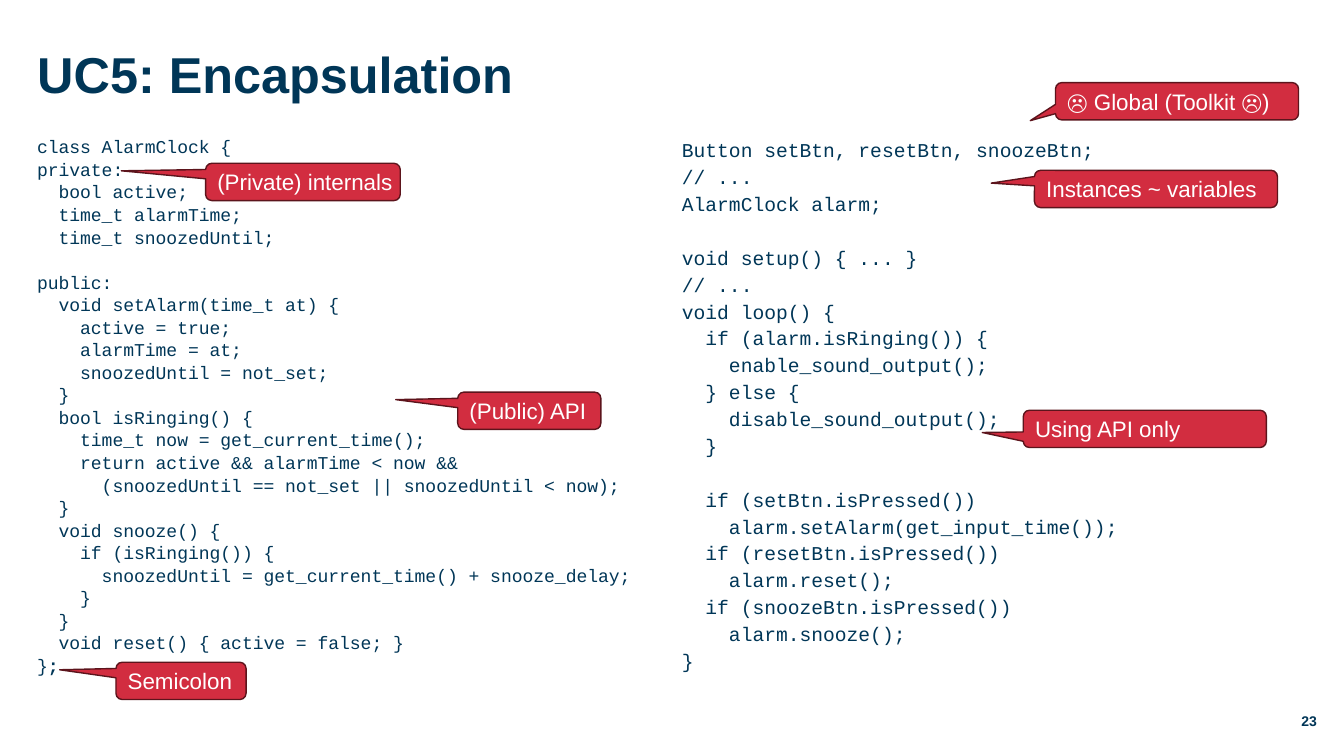
from dataclasses import dataclass

from pptx import Presentation
from pptx.dml.color import RGBColor
from pptx.enum.shapes import MSO_SHAPE as Preset
from pptx.enum.text import MSO_ANCHOR as Anchor, MSO_AUTO_SIZE as AutoSize, PP_ALIGN as Align
from pptx.slide import Slide
from pptx.text.text import Font
from pptx.util import Inches, Pt

SLIDE_W, SLIDE_H = Inches(13.33), Inches(7.5)
NAVY, RED, MAROON, WHITE = "003657", "D22D40", "5C141C", "FFFFFF"
CALLOUT_ROWS = 4.93

CLASS_CODE = """\
class AlarmClock {
private:
  bool active;
  time_t alarmTime;
  time_t snoozedUntil;

public:
  void setAlarm(time_t at) {
    active = true;
    alarmTime = at;
    snoozedUntil = not_set;
  }
  bool isRinging() {
    time_t now = get_current_time();
    return active && alarmTime < now &&
      (snoozedUntil == not_set || snoozedUntil < now);
  }
  void snooze() {
    if (isRinging()) {
      snoozedUntil = get_current_time() + snooze_delay;
    }
  }
  void reset() { active = false; }
};"""

SKETCH_CODE = """\
Button setBtn, resetBtn, snoozeBtn;
// ...
AlarmClock alarm;

void setup() { ... }
// ...
void loop() {
  if (alarm.isRinging()) {
    enable_sound_output();
  } else {
    disable_sound_output();
  }

  if (setBtn.isPressed())
    alarm.setAlarm(get_input_time());
  if (resetBtn.isPressed())
    alarm.reset();
  if (snoozeBtn.isPressed())
    alarm.snooze();
}"""


@dataclass(frozen=True)
class Listing:
    col: float
    code: str
    size: float
    pitch: float
    bold_end: str = ""


@dataclass(frozen=True)
class Callout:
    label: str
    col: float
    row: float
    cols: float
    tip_x: float
    tip_y: float


LISTINGS = [
    Listing(2.02, CLASS_CODE, 12.9, 16.1, bold_end=";"),
    Listing(50, SKETCH_CODE, 14, 19.2),
]

CALLOUTS = [
    Callout("Semicolon", 8.63, 87.6, 9.68, -0.933, -0.298),
    Callout("(Private) internals", 15.3, 21.6, 14.48, -0.933, -0.298),
    Callout("(Public) API", 34.06, 51.87, 10.65, -0.933, -0.298),
    Callout("Instances ~ variables", 76.97, 22.53, 18.08, -0.678, -0.157),
    Callout("Using API only", 76.14, 54.27, 18.08, -0.669, 0.097),
    Callout("☹ Global (Toolkit ☹)", 78.54, 10.93, 18.08, -0.604, 0.521),
]


def color(code: str) -> RGBColor:
    return RGBColor.from_string(code)


def cell(col: float, row: float, cols: float, rows: float) -> tuple[int, int, int, int]:
    """Turn a place on the 100 by 100 slide grid into left, top, width, height."""
    return (round(SLIDE_W * col / 100), round(SLIDE_H * row / 100),
            round(SLIDE_W * cols / 100), round(SLIDE_H * rows / 100))


def style(font: Font, name: str, size: float, ink: str, bold: bool = False) -> None:
    font.name, font.size, font.bold = name, Pt(size), bold
    font.color.rgb = color(ink)


def add_title(slide: Slide, text: str) -> None:
    title = slide.shapes.title
    title.left, title.top, title.width, title.height = cell(2.02, 0, 96, 14.4)
    frame = title.text_frame
    frame.text = text
    frame.auto_size, frame.vertical_anchor = AutoSize.NONE, Anchor.BOTTOM
    heading = frame.paragraphs[0]
    heading.alignment = Align.LEFT
    style(heading.font, "Arial", 36, NAVY, bold=True)


def add_page_number(slide: Slide, number: str) -> None:
    frame = slide.shapes.add_textbox(*cell(96.55, 94.13, 1.43, 2.53)).text_frame
    frame.margin_left = frame.margin_right = frame.margin_top = frame.margin_bottom = 0
    frame.word_wrap, frame.vertical_anchor = True, Anchor.MIDDLE
    frame.text = number
    frame.paragraphs[0].alignment = Align.RIGHT
    style(frame.paragraphs[0].font, "Arial", 10, NAVY, bold=True)


def add_listing(slide: Slide, listing: Listing) -> None:
    """Set one paragraph per code line; an empty line becomes space before the next."""
    frame = slide.shapes.add_textbox(*cell(listing.col, 17.2, 48, 73.87)).text_frame
    frame.word_wrap = True
    frame.text = listing.code.replace("\n\n", "\n")
    blocks = [block.split("\n") for block in listing.code.split("\n\n")]
    starts_block = [index == 0 for block in blocks for index in range(len(block))]
    for number, (line, starts) in enumerate(zip(frame.paragraphs, starts_block)):
        line.line_spacing = Pt(listing.pitch)
        line.space_before = Pt(listing.pitch if starts and number else 0)
        style(line.font, "Courier New", listing.size, NAVY)
    if listing.bold_end:
        last = frame.paragraphs[-1]
        last.runs[0].text = last.text.removesuffix(listing.bold_end)
        ending = last.add_run()
        ending.text = listing.bold_end
        ending.font.bold = True


def add_callout(slide: Slide, callout: Callout) -> None:
    bubble = slide.shapes.add_shape(
        Preset.ROUNDED_RECTANGULAR_CALLOUT,
        *cell(callout.col, callout.row, callout.cols, CALLOUT_ROWS))
    bubble.adjustments[0], bubble.adjustments[1] = callout.tip_x, callout.tip_y
    bubble.shadow.inherit = False
    bubble.fill.solid()
    bubble.fill.fore_color.rgb = color(RED)
    bubble.line.color.rgb = color(MAROON)
    bubble.line.width = Pt(1)
    frame = bubble.text_frame
    frame.word_wrap, frame.vertical_anchor = False, Anchor.MIDDLE
    frame.text = callout.label
    frame.paragraphs[0].alignment = Align.LEFT
    style(frame.paragraphs[0].font, "Arial", 16, WHITE)


def main() -> None:
    deck = Presentation()
    deck.slide_width, deck.slide_height = SLIDE_W, SLIDE_H
    slide = deck.slides.add_slide(deck.slide_layouts.get_by_name("Title Only"))
    add_page_number(slide, "23")
    add_title(slide, "UC5: Encapsulation")
    for listing in LISTINGS:
        add_listing(slide, listing)
    for callout in CALLOUTS:
        add_callout(slide, callout)
    deck.save("out.pptx")


if __name__ == "__main__":
    main()
